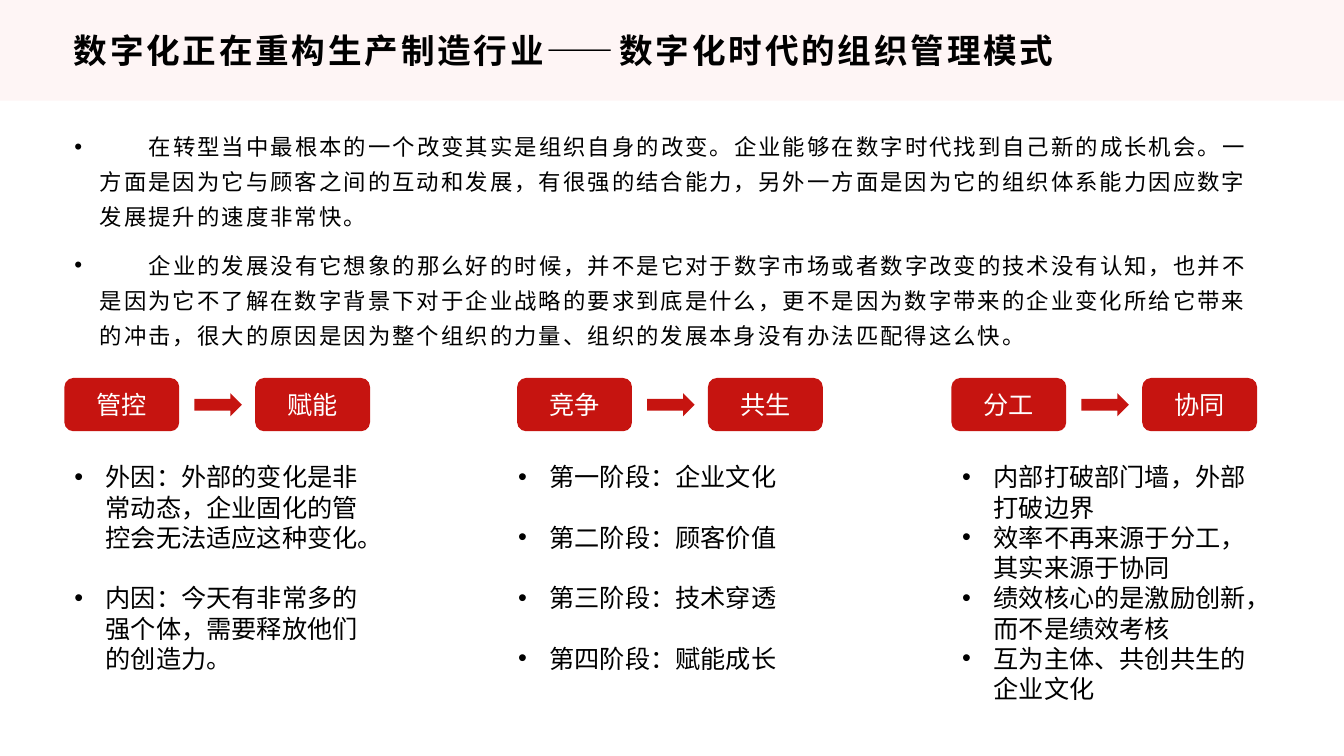
from lxml.etree import SubElement
from pptx import Presentation
from pptx.dml.color import RGBColor
from pptx.enum.shapes import MSO_SHAPE
from pptx.enum.text import MSO_ANCHOR, MSO_AUTO_SIZE, PP_ALIGN
from pptx.oxml.ns import qn
from pptx.util import Pt

RED = RGBColor(0xC6, 0x14, 0x10)
BLUSH = RGBColor(0xFE, 0xF5, 0xF5)
BLACK = RGBColor(0, 0, 0)
WHITE = RGBColor(0xFF, 0xFF, 0xFF)


def write(shape, texts, size=18, color=BLACK, font="Arial", bold=False, align=PP_ALIGN.LEFT,
          anchor=MSO_ANCHOR.TOP, spacing=0, line=1.0, before=0, after=0, indent=0, tab=0):
    frame = shape.text_frame
    frame.word_wrap = True
    frame.auto_size = MSO_AUTO_SIZE.NONE
    frame.vertical_anchor = anchor
    for index, text in enumerate(texts):
        paragraph = frame.paragraphs[0] if index == 0 else frame.add_paragraph()
        paragraph.alignment = align
        paragraph.line_spacing = line
        paragraph.space_before = Pt(before if index else 0)
        paragraph.space_after = Pt(after)
        if indent:
            properties = paragraph._p.get_or_add_pPr()
            properties.set("marL", str(Pt(indent)))
            properties.set("indent", str(-Pt(indent)))
            SubElement(properties, qn("a:buFont"), typeface="Arial")
            SubElement(properties, qn("a:buChar"), char="•")
            if tab:
                tabs = SubElement(properties, qn("a:tabLst"))
                SubElement(tabs, qn("a:tab"), pos=str(Pt(tab)), algn="l")
        run = paragraph.add_run()
        run.text = text
        run.font.size = Pt(size)
        run.font.bold = bold
        run.font.color.rgb = color
        run.font.name = font
        run_properties = run.font._element
        run_properties.set("spc", str(int(spacing * 100)))
        SubElement(run_properties, qn("a:ea"), typeface=font)


def add_block(kind, left, top, width, height, fill):
    shape = slide.shapes.add_shape(kind, Pt(left), Pt(top), Pt(width), Pt(height))
    shape.shadow.inherit = False
    shape.fill.solid()
    shape.fill.fore_color.rgb = fill
    shape.line.fill.background()
    return shape


presentation = Presentation()
presentation.slide_width = Pt(960)
presentation.slide_height = Pt(540)
slide = presentation.slides.add_slide(presentation.slide_layouts[1])

band = add_block(MSO_SHAPE.RECTANGLE, 0, 0, 960, 72, BLUSH)
slide.shapes._spTree.insert(2, band._element)

title = slide.shapes.title
title.left, title.top, title.width, title.height = Pt(45.4), Pt(18.7), Pt(869), Pt(34.6)
write(title, ["数字化正在重构生产制造行业——数字化时代的组织管理模式"], size=24,
      font="Noto Sans CJK JP", bold=True, anchor=MSO_ANCHOR.MIDDLE, spacing=2)

body = slide.placeholders[1]
body.left, body.top, body.width, body.height = Pt(46), Pt(85.7), Pt(867.6), Pt(160.6)
write(body, [
    "\t在转型当中最根本的一个改变其实是组织自身的改变。企业能够在数字时代找到自己新的成长机会。一方面是因为它与顾客之间的互动和发展，有很强的结合能力，另外一方面是因为它的组织体系能力因应数字发展提升的速度非常快。",
    "\t企业的发展没有它想象的那么好的时候，并不是它对于数字市场或者数字改变的技术没有认知，也并不是因为它不了解在数字背景下对于企业战略的要求到底是什么，更不是因为数字带来的企业变化所给它带来的冲击，很大的原因是因为整个组织的力量、组织的发展本身没有办法匹配得这么快。",
], size=16, spacing=1.5, line=1.3, after=10, indent=18, tab=53)

columns = [
    (46, 46, "管控", "赋能", 21.6, [
        "外因：外部的变化是非常动态，企业固化的管控会无法适应这种变化。",
        "内因：今天有非常多的强个体，需要释放他们的创造力。"]),
    (369.4, 363, "竞争", "共生", 21.6, [
        "第一阶段：企业文化", "第二阶段：顾客价值", "第三阶段：技术穿透", "第四阶段：赋能成长"]),
    (679.6, 680.2, "分工", "协同", 0, [
        "内部打破部门墙，外部打破边界", "效率不再来源于分工，其实来源于协同",
        "绩效核心的是激励创新，而不是绩效考核", "互为主体、共创共生的企业文化"]),
]
for left, list_left, old_mode, new_mode, gap, points in columns:
    for offset, label in ((0, old_mode), (136.3, new_mode)):
        button = add_block(MSO_SHAPE.ROUNDED_RECTANGLE, left + offset, 270, 82, 38, RED)
        write(button, [label], color=WHITE, align=PP_ALIGN.CENTER, anchor=MSO_ANCHOR.MIDDLE)
    add_block(MSO_SHAPE.RIGHT_ARROW, left + 92.8, 280.8, 34, 16.6, RED)
    point_list = slide.shapes.add_textbox(Pt(list_left), Pt(326.2), Pt(219), Pt(181.4 if gap == 0 else 159.8))
    write(point_list, points, before=gap, indent=22.5)

presentation.save("out.pptx")
